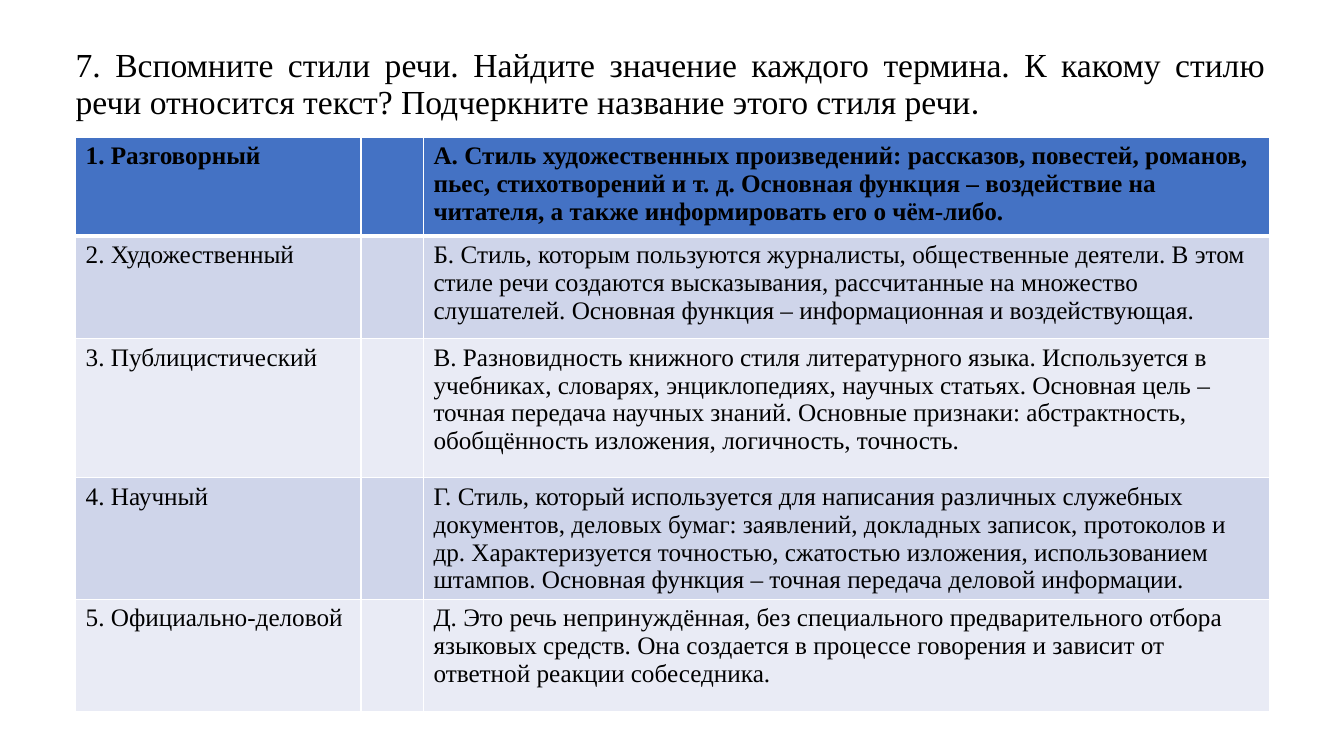
from dataclasses import dataclass

from lxml import etree
from pptx import Presentation
from pptx.dml.color import RGBColor
from pptx.enum.text import MSO_ANCHOR, PP_ALIGN
from pptx.oxml.ns import qn
from pptx.util import Inches, Pt

MIDDLE = MSO_ANCHOR.MIDDLE
TOP = MSO_ANCHOR.TOP
JUSTIFY = PP_ALIGN.JUSTIFY
LEFT = PP_ALIGN.LEFT


@dataclass(frozen=True)
class Theme:
    ink: str = "000000"
    line: str = "FFFFFF"
    head: str = "4472C4"
    bands: tuple = ("E9EBF5", "CFD5EA")
    serif: str = "Times New Roman"
    sans: str = "Calibri"
    title: int = 24
    body: int = 18


THEME = Theme()

TITLE = (
    "7. Вспомните стили речи. Найдите значение каждого термина. "
    "К какому стилю речи относится текст? Подчеркните название этого стиля речи"
)

STYLES = [
    ("1. Разговорный",
     "А. Стиль художественных произведений: рассказов, повестей, романов, "
     "пьес, стихотворений и т. д. Основная функция – воздействие на "
     "читателя, а также информировать его о чём-либо."),
    ("2. Художественный",
     "Б. Стиль, которым пользуются журналисты, общественные деятели. "
     "В этом стиле речи создаются высказывания, рассчитанные на множество "
     "слушателей. Основная функция – информационная и воздействующая."),
    ("3. Публицистический",
     "В. Разновидность книжного стиля литературного языка. Используется в "
     "учебниках, словарях, энциклопедиях, научных статьях. Основная цель – "
     "точная передача научных знаний. Основные признаки: абстрактность, "
     "обобщённость изложения, логичность, точность."),
    ("4. Научный",
     "Г. Стиль, который используется для написания различных служебных "
     "документов, деловых бумаг: заявлений, докладных записок, протоколов и "
     "др. Характеризуется точностью, сжатостью изложения, использованием "
     "штампов. Основная функция – точная передача деловой информации."),
    ("5. Официально-деловой",
     "Д. Это речь непринуждённая, без специального предварительного отбора "
     "языковых средств. Она создается в процессе говорения и зависит от "
     "ответной реакции собеседника."),
]

WIDTHS = (2.83, 0.62, 8.39)
HEIGHTS = (0.98, 1.02, 1.38, 1.11, 1.11)


def write(para, text, size=THEME.body, font=THEME.serif, bold=False,
          align=LEFT, space=None):
    para.alignment = align
    para.line_spacing = space
    run = para.add_run()
    run.text = text
    run.font.size = Pt(size)
    run.font.name = font
    run.font.bold = bold
    run.font.color.rgb = RGBColor.from_string(THEME.ink)


def add_title(slide):
    title = slide.shapes.title
    title.left, title.top = Inches(0.65), Inches(0.4)
    title.width, title.height = Inches(12), Inches(0.89)
    frame = title.text_frame
    frame.word_wrap = True
    frame.vertical_anchor = MIDDLE
    para = frame.paragraphs[0]
    look = dict(size=THEME.title, align=JUSTIFY, space=0.9)
    write(para, TITLE, **look)
    write(para, ".", font=THEME.sans, **look)


def add_edge(cell, side, width):
    props = cell._tc.get_or_add_tcPr()
    edge = etree.SubElement(props, qn(f"a:ln{side}"), w=str(Pt(width)))
    fill = etree.SubElement(edge, qn("a:solidFill"))
    etree.SubElement(fill, qn("a:srgbClr"), val=THEME.line)


def style_cell(cell, row):
    edges = {"L": 1, "R": 1, "T": 3 if row == 1 else 1, "B": 3 if row == 0 else 1}
    for side, width in edges.items():
        add_edge(cell, side, width)
    cell.fill.solid()
    color = THEME.bands[row % 2] if row else THEME.head
    cell.fill.fore_color.rgb = RGBColor.from_string(color)
    cell.vertical_anchor = TOP


def add_table(slide):
    frame = slide.shapes.add_table(
        len(HEIGHTS), len(WIDTHS), Inches(0.75), Inches(1.36),
        Inches(sum(WIDTHS)), Inches(sum(HEIGHTS)))
    table = frame.table
    for column, width in zip(table.columns, WIDTHS):
        column.width = Inches(width)
    for row, (name, sense) in enumerate(STYLES):
        table.rows[row].height = Inches(HEIGHTS[row])
        for col, text in enumerate((name, "", sense)):
            cell = table.cell(row, col)
            style_cell(cell, row)
            if text:
                write(cell.text_frame.paragraphs[0], text, bold=row == 0)


def main():
    deck = Presentation()
    deck.slide_width, deck.slide_height = Inches(13.33), Inches(7.5)
    slide = deck.slides.add_slide(deck.slide_layouts[5])
    add_title(slide)
    add_table(slide)
    deck.save("out.pptx")


if __name__ == "__main__":
    main()
